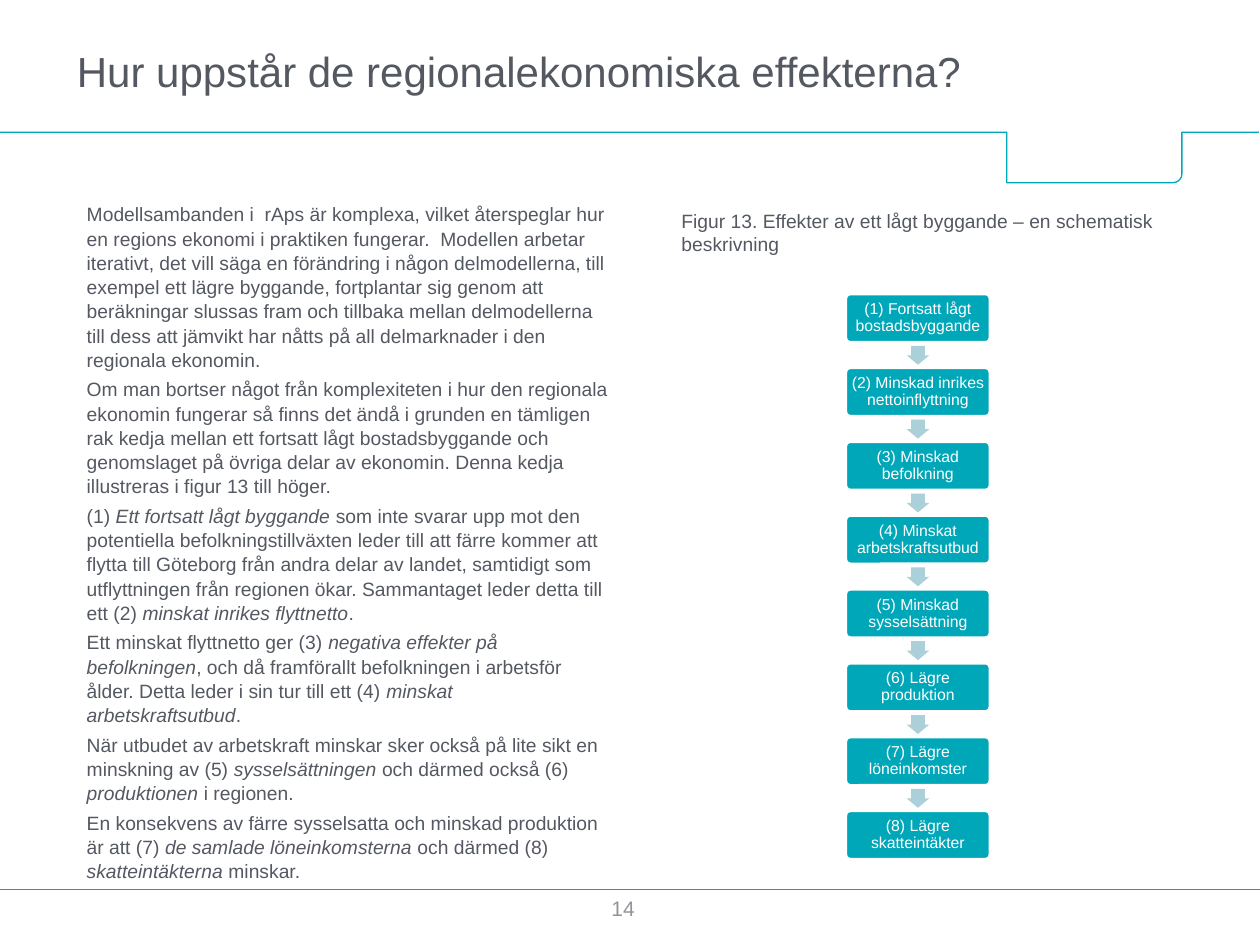
from dataclasses import dataclass
from math import cos, pi, sin

from lxml.etree import SubElement
from pptx import Presentation
from pptx.dml.color import RGBColor
from pptx.enum.shapes import MSO_CONNECTOR, MSO_SHAPE
from pptx.enum.text import MSO_ANCHOR, MSO_AUTO_SIZE, PP_ALIGN
from pptx.oxml.ns import qn
from pptx.util import Inches, Length, Pt

TEAL, PALE, WHITE = "00A7B9", "ABD0D9", "FFFFFF"
DARK, GREY = "545861", "90959D"
COLS, ROWS = 100, 75


@dataclass(frozen=True)
class Area:
    col: float
    row: float
    cols: float
    rows: float

    def emu(self) -> tuple[Length, ...]:
        return tuple(grid(v) for v in (self.col, self.row, self.cols, self.rows))


@dataclass(frozen=True)
class Style:
    size: float
    color: str
    align: PP_ALIGN = PP_ALIGN.LEFT
    spacing: float = 1.0
    before: float = 0


TITLE = Style(24, DARK)
BODY = Style(11, DARK, spacing=1.05, before=3)
CAPTION = Style(11, DARK)
STEP = Style(9, WHITE, PP_ALIGN.CENTER, 0.9)
NUMBER = Style(12, GREY, PP_ALIGN.CENTER)

PARAGRAPHS = [
    "Modellsambanden i  rAps är komplexa, vilket återspeglar hur en regions ekonomi i praktiken "
    "fungerar.  Modellen arbetar iterativt, det vill säga en förändring i någon delmodellerna, "
    "till exempel ett lägre byggande, fortplantar sig genom att beräkningar slussas fram och "
    "tillbaka mellan delmodellerna till dess att jämvikt har nåtts på all delmarknader i den "
    "regionala ekonomin.",
    "Om man bortser något från komplexiteten i hur den regionala ekonomin fungerar så finns det "
    "ändå i grunden en tämligen rak kedja mellan ett fortsatt lågt bostadsbyggande och "
    "genomslaget på övriga delar av ekonomin. Denna kedja illustreras i figur 13 till höger.",
    "(1) *Ett fortsatt lågt byggande *som inte svarar upp mot den potentiella "
    "befolkningstillväxten leder till att färre kommer att flytta till Göteborg från andra delar "
    "av landet, samtidigt som utflyttningen från regionen ökar. Sammantaget leder detta till "
    "ett (2) *minskat inrikes flyttnetto*.",
    "Ett minskat flyttnetto ger (3) *negativa effekter på befolkningen*, och då framförallt "
    "befolkningen i arbetsför ålder. Detta leder i sin tur till ett (4) "
    "*minskat arbetskraftsutbud*.",
    "När utbudet av arbetskraft minskar sker också på lite sikt en minskning av (5) "
    "*sysselsättningen *och därmed också (6) *produktionen* i regionen.",
    "En konsekvens av färre sysselsatta och minskad produktion är att (7) "
    "*de samlade löneinkomsterna *och därmed (8) *skatteintäkterna* minskar.",
]

STEPS = [
    "Fortsatt lågt bostadsbyggande",
    "Minskad inrikes nettoinflyttning",
    "Minskad befolkning",
    "Minskat arbetskraftsutbud",
    "Minskad sysselsättning",
    "Lägre produktion",
    "Lägre löneinkomster",
    "Lägre skatteintäkter",
]
FIRST_STEP = Area(67.1, 23.3, 11.5, 3.9)
STEP_PITCH = 5.86
ARROW = Area(72.1, 27.3, 1.5, 1.8)


def grid(units: float) -> Length:
    return Inches(units * 10 / COLS)


def rgb(color: str) -> RGBColor:
    return RGBColor.from_string(color)


def write(sp, paragraphs: list[str], style: Style, anchor=MSO_ANCHOR.TOP) -> None:
    tf = sp.text_frame
    tf.word_wrap = True
    tf.auto_size = MSO_AUTO_SIZE.NONE
    tf.vertical_anchor = anchor
    for i, text in enumerate(paragraphs):
        p = tf.add_paragraph() if i else tf.paragraphs[0]
        p.alignment = style.align
        p.line_spacing = style.spacing
        p.space_before = Pt(style.before if i else 0)
        for j, part in enumerate(text.split("*")):
            r = p.add_run()
            r.text = part
            r.font.name = "Arial"
            r.font.size = Pt(style.size)
            r.font.italic = j % 2 == 1
            r.font.color.rgb = rgb(style.color)


def add_text(s, area: Area, paragraphs: list[str], style: Style) -> None:
    write(s.shapes.add_textbox(*area.emu()), paragraphs, style)


def add_filled(s, kind, area: Area, fill: str):
    sp = s.shapes.add_shape(kind, *area.emu())
    sp.shadow.inherit = False
    sp.fill.solid()
    sp.fill.fore_color.rgb = rgb(fill)
    sp.line.fill.background()
    return sp


def add_step(s, index: int, label: str) -> None:
    a = FIRST_STEP
    area = Area(a.col, a.row + index * STEP_PITCH, a.cols, a.rows)
    sp = add_filled(s, MSO_SHAPE.ROUNDED_RECTANGLE, area, TEAL)
    sp.adjustments[0] = 0.1
    sp.line.color.rgb = rgb(WHITE)
    sp.line.width = Pt(2)
    tf = sp.text_frame
    tf.margin_left = tf.margin_right = Inches(0.02)
    tf.margin_top = tf.margin_bottom = Inches(0.04)
    write(sp, [f"({index + 1}) {label}"], STEP, MSO_ANCHOR.MIDDLE)


def add_arrow(s, index: int) -> None:
    area = Area(ARROW.col, ARROW.row + index * STEP_PITCH, ARROW.cols, ARROW.rows)
    sp = add_filled(s, MSO_SHAPE.RIGHT_ARROW, area, PALE)
    sp.adjustments[0], sp.adjustments[1] = 0.6, 0.5
    sp.rotation = 90


def add_header_rule(s) -> None:
    top, bottom, left, right, radius = 10.5, 14.5, 79.9, 93.8, 0.7
    angles = [pi / 2 * (1 - k / 8) for k in range(9)]
    corner = [(right - radius + radius * cos(a), bottom - radius + radius * sin(a))
              for a in angles]
    points = [(left, top), (left, bottom), *corner, (right, top), (99.9, top)]
    fb = s.shapes.build_freeform(0, grid(top))
    fb.add_line_segments([(grid(x), grid(y)) for x, y in points], close=False)
    sp = fb.convert_to_shape()
    sp.shadow.inherit = False
    sp.fill.background()
    sp.line.color.rgb = rgb(TEAL)
    sp.line.width = Pt(0.75)


def add_footer_rule(s) -> None:
    y = grid(70.6)
    line = s.shapes.add_connector(MSO_CONNECTOR.STRAIGHT, grid(COLS), y, 0, y)
    line.line.color.rgb = rgb(TEAL)
    line.line.width = Pt(0.75)
    SubElement(line._element.spPr, qn("a:effectLst"))


def main() -> None:
    prs = Presentation()
    prs.slide_width, prs.slide_height = grid(COLS), grid(ROWS)
    s = prs.slides.add_slide(prs.slide_layouts[5])
    add_header_rule(s)
    add_footer_rule(s)
    title = s.shapes.title
    title.left, title.top, title.width, title.height = Area(5.1, 0.9, 89, 9.4).emu()
    write(title, ["Hur uppstår de regionalekonomiska effekterna?"], TITLE, MSO_ANCHOR.MIDDLE)
    for i, label in enumerate(STEPS):
        add_step(s, i, label)
        if i < len(STEPS) - 1:
            add_arrow(s, i)
    add_text(s, Area(5.9, 15.5, 43.6, 54.3), PARAGRAPHS, BODY)
    add_text(s, Area(53.1, 16.1, 45.2, 4.7),
             ["Figur 13. Effekter av ett lågt byggande – en schematisk beskrivning"], CAPTION)
    add_text(s, Area(44.5, 70.6, 9.9, 3.1), ["14"], NUMBER)
    prs.save("out.pptx")


if __name__ == "__main__":
    main()
